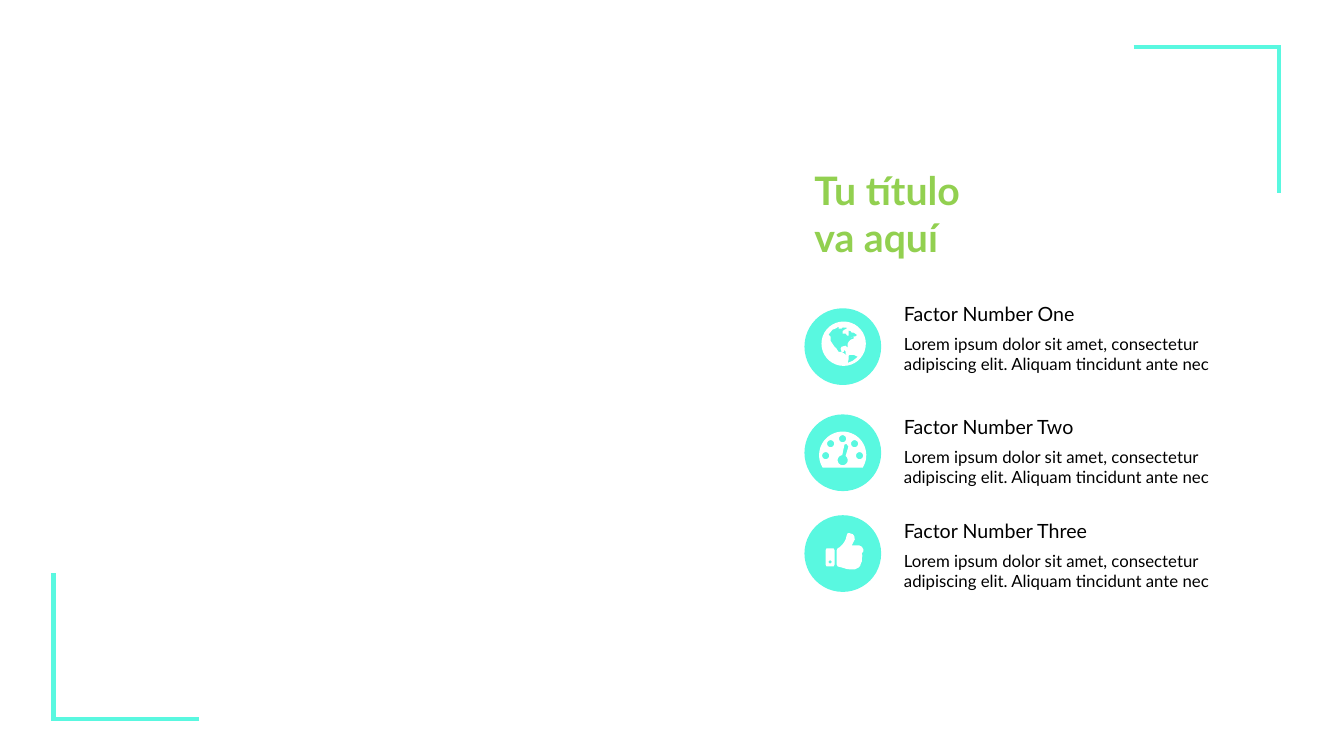
from dataclasses import dataclass
from math import cos, radians, sin

from lxml import etree
from pptx import Presentation
from pptx.dml.color import RGBColor
from pptx.enum.shapes import MSO_CONNECTOR, MSO_SHAPE
from pptx.enum.text import MSO_AUTO_SIZE
from pptx.oxml.ns import qn
from pptx.util import Pt

STRAIGHT = MSO_CONNECTOR.STRAIGHT
OVAL = MSO_SHAPE.OVAL
FIT_SHAPE = MSO_AUTO_SIZE.SHAPE_TO_FIT_TEXT


@dataclass(frozen=True)
class Theme:
    """Colours, font and sizes of the slide."""
    accent: RGBColor = RGBColor(0x59, 0xF8, 0xE0)
    title: RGBColor = RGBColor(0x92, 0xD0, 0x50)
    text: RGBColor = RGBColor(0, 0, 0)
    icon: RGBColor = RGBColor(255, 255, 255)
    font: str = "Lato"
    title_size: float = 28
    heading_size: float = 14
    body_size: float = 12
    line_width: float = 3


THEME = Theme()
ICON_UNIT = 0.72
BADGE_LEFT, BADGE_SIZE = 574.6, 54.8
TEXT_LEFT, TEXT_WIDTH = 638.6, 248
BODY_OFFSET = 22.4
CORNER_ARM = 104
BODY = "Lorem ipsum dolor sit amet, consectetur adipiscing elit. Aliquam tincidunt ante nec"


def arc(cx, cy, radius, start=0, end=360):
    """Return points along a circular arc, clockwise in degrees."""
    steps = 36
    angles = [radians(start + (end - start) * i / steps) for i in range(steps + 1)]
    return [(cx + radius * cos(a), cy + radius * sin(a)) for a in angles]


def globe():
    """Return the globe outline with its two land masses."""
    north = [
        (29, 16), (32, 15), (34.5, 14.5), (35, 13), (32, 11), (30, 11), (29, 9.5), (27, 9),
        (27, 14), (25.5, 14), (24, 12), (21, 12), (21, 9.5), (23, 8), (25, 7), (25, 6),
        (22, 6), (19, 5), (21, 6), (20, 7), (17, 7), (17, 5), (14, 7), (11, 8), (7, 13),
        (9, 15), (9, 19), (11, 22), (13, 25), (15, 27), (17, 30), (20, 30), (23, 32),
        (26, 35), (24, 32), (24, 30), (23, 28), (22, 30), (20, 30), (19, 27), (20, 25),
        (24, 24), (26, 26), (26, 22), (27, 20), (29, 18), (32, 17), (32, 15),
    ]
    south = [(36, 35), (34, 34), (32, 33), (28, 33), (27, 34), (27, 37), (26, 41), (31, 39)]
    return [arc(22, 22, 22), north, south]


def gauge():
    """Return the gauge dome with its dial dots and needle."""
    dots = [arc(x, y, 3.5) for x, y in arc(23.2, 24, 16.8, 180, 360)[::9]]
    needle = [(25, 13), (27, 12.3), (29, 15)] + arc(23.3, 28.5, 5, -55, 265)
    return [arc(23.3, 23.5, 23.4, 148, 392), *dots, needle]


def thumb():
    """Return the cuff, its button and the raised thumb."""
    cuff = [(0, 17), (1, 15), (8, 15), (9, 17), (9, 31), (8, 33), (1, 33), (0, 31)]
    hand = [
        (36, 20), (36.5, 22.5), (36, 25), (36, 28), (35, 30), (34.5, 32), (33, 34), (29, 36),
        (25, 36), (21, 35.5), (16, 34), (12, 33), (11, 31), (11, 17), (12, 15), (14, 14),
        (17, 11), (19, 8), (20, 6), (21, 2), (22, 0), (24, 0), (27, 1), (28.5, 3), (29, 6),
        (27, 10), (26, 12), (33, 12), (36, 13.5), (37.5, 16), (37.5, 18),
    ]
    return [cuff, arc(4.5, 28.5, 1.5), hand]


def paint(sp, color):
    """Give a shape a plain fill without line or shadow."""
    sp.shadow.inherit = False
    sp.fill.solid()
    sp.fill.fore_color.rgb = color
    sp.line.fill.background()


def add_badge(s, top):
    """Add the round badge behind an icon."""
    sp = s.shapes.add_shape(OVAL, Pt(BADGE_LEFT), Pt(top), Pt(BADGE_SIZE), Pt(BADGE_SIZE))
    paint(sp, THEME.accent)


def add_icon(s, contours, left, top):
    """Add an icon whose inner contours are holes."""
    outlines = [
        [(Pt(left + x * ICON_UNIT), Pt(top + y * ICON_UNIT)) for x, y in contour]
        for contour in contours
    ]
    builder = s.shapes.build_freeform(*outlines[0][0])
    for i, points in enumerate(outlines):
        if i:
            builder.move_to(*points[0])
        builder.add_line_segments(points[1:], close=True)
    paint(builder.convert_to_shape(), THEME.icon)


def add_text(s, text, *, left, top, width, height, size, color, bold=False):
    """Add a text box with one paragraph per line of text."""
    tf = s.shapes.add_textbox(Pt(left), Pt(top), Pt(width), Pt(height)).text_frame
    tf.word_wrap = True
    tf.auto_size = FIT_SHAPE
    tf.text = text
    for p in tf.paragraphs:
        for r in p.runs:
            r.font.name = THEME.font
            r.font.size = Pt(size)
            r.font.bold = bold
            r.font.color.rgb = color


def add_corner(s, x, y, dx, dy):
    """Add a grouped corner bracket with arms toward dx and dy."""
    overlap = THEME.line_width / 2
    group = s.shapes.add_group_shape()
    arms = [
        (x, y + dy * CORNER_ARM, x, y - dy * overlap),
        (x + dx * CORNER_ARM, y, x - dx * overlap, y),
    ]
    for ends in arms:
        line = group.shapes.add_connector(STRAIGHT, *map(Pt, ends))
        line.line.color.rgb = THEME.accent
        line.line.width = Pt(THEME.line_width)
        etree.SubElement(line._element.spPr, qn("a:effectLst"))


def add_factor(s, heading, text_top, badge_top, contours, icon_left, icon_top):
    """Add one factor with its badge, icon, heading and body."""
    add_badge(s, badge_top)
    add_icon(s, contours, icon_left, icon_top)
    add_text(s, heading, left=TEXT_LEFT, top=text_top, width=TEXT_WIDTH, height=24.5,
             size=THEME.heading_size, color=THEME.text)
    add_text(s, BODY, left=TEXT_LEFT, top=text_top + BODY_OFFSET, width=TEXT_WIDTH, height=36,
             size=THEME.body_size, color=THEME.text)


def main():
    """Build and save the slide."""
    prs = Presentation()
    prs.slide_width, prs.slide_height = Pt(960), Pt(540)
    s = prs.slides.add_slide(prs.slide_layouts[6])
    factors = [
        ("Factor Number One", 212.4, 220.2, globe(), 586.8, 229.7),
        ("Factor Number Two", 293.2, 296, gauge(), 585.2, 308.2),
        ("Factor Number Three", 367.1, 368, thumb(), 589.7, 380.9),
    ]
    for factor in factors:
        add_factor(s, *factor)
    add_corner(s, 38.2, 513.4, 1, -1)
    add_corner(s, 913.7, 33.8, -1, 1)
    add_text(s, "Tu título\nva aquí", left=574.6, top=115.2, width=217.4, height=74.9,
             size=THEME.title_size, color=THEME.title, bold=True)
    prs.save("out.pptx")


if __name__ == "__main__":
    main()
